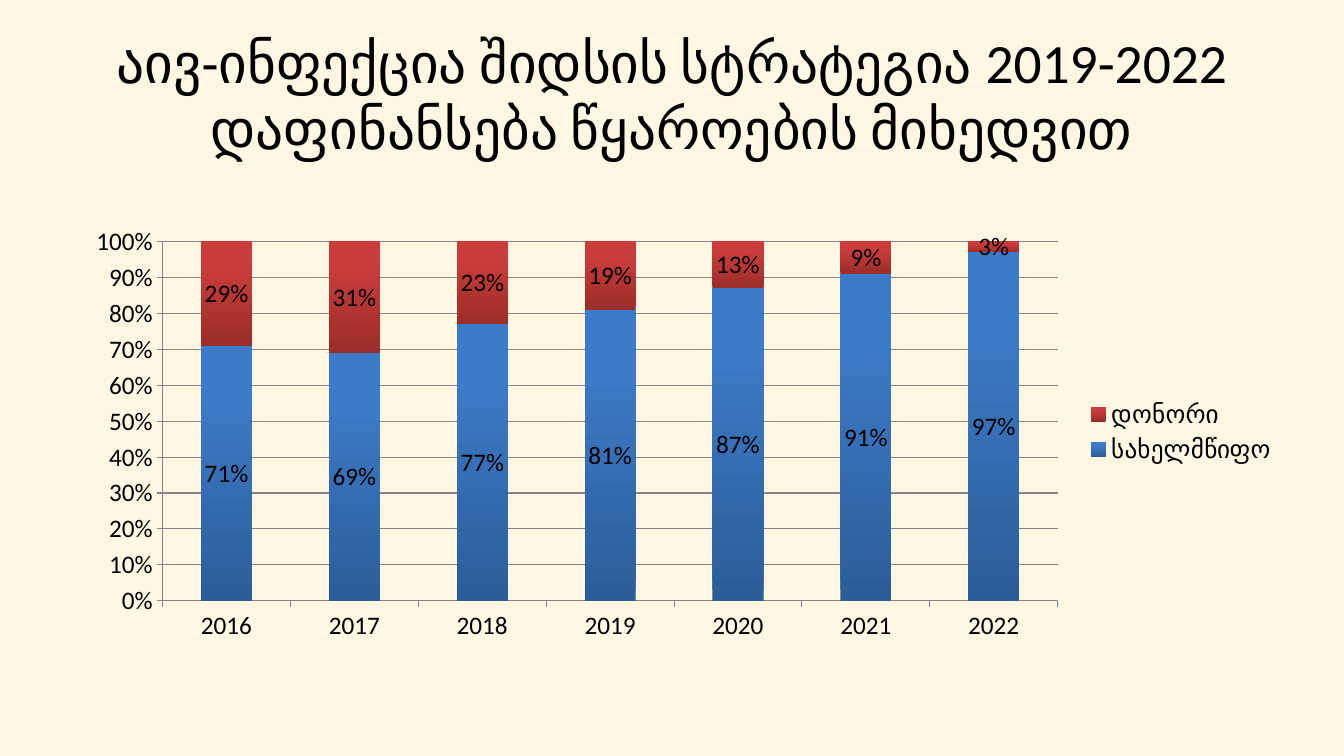
import pptx
import pptx.chart.data
import pptx.dml.color
import pptx.enum.chart
import pptx.enum.text
import pptx.oxml
import pptx.oxml.ns
import pptx.util


def colour(code):
    return pptx.dml.color.RGBColor.from_string(code)


class FundingSlide:
    font = "Calibri"
    ink = "000000"
    rule = "868686"

    def __init__(self, deck, background):
        self.width, self.height = deck.slide_width, deck.slide_height
        self.slide = deck.slides.add_slide(deck.slide_layouts[6])
        fill = self.slide.background.fill
        fill.solid()
        fill.fore_color.rgb = colour(background)

    def box(self, left, top, width, height):
        return (int(left * self.width), int(top * self.height),
                int(width * self.width), int(height * self.height))

    def style(self, font, size):
        font.name = self.font
        font.size = pptx.util.Pt(size)
        font.color.rgb = colour(self.ink)

    def title(self, wording, share, size):
        frame = self.slide.shapes.add_textbox(*self.box(*share)).text_frame
        frame.word_wrap = True
        frame.vertical_anchor = pptx.enum.text.MSO_ANCHOR.MIDDLE
        frame.text = wording
        paragraph = frame.paragraphs[0]
        paragraph.alignment = pptx.enum.text.PP_ALIGN.CENTER
        for run in paragraph.runs:
            self.style(run.font, size)

    def line(self, target):
        target.line.color.rgb = colour(self.rule)
        target.line.width = pptx.util.Pt(0.75)

    def stacked_chart(self, years, sources, share, size, plot_share):
        data = pptx.chart.data.CategoryChartData(number_format="0%")
        data.categories = years
        for name, values, _ in sources:
            data.add_series(name, values)
        chart = self.slide.shapes.add_chart(
            pptx.enum.chart.XL_CHART_TYPE.COLUMN_STACKED_100,
            *self.box(*share), data).chart
        self.style(chart.font, size)
        chart.has_title = False
        chart.has_legend = True
        chart.legend.position = pptx.enum.chart.XL_LEGEND_POSITION.RIGHT
        chart.legend.include_in_layout = False

        for axis in (chart.category_axis, chart.value_axis):
            axis.major_tick_mark = pptx.enum.chart.XL_TICK_MARK.OUTSIDE
            axis.minor_tick_mark = pptx.enum.chart.XL_TICK_MARK.NONE
            self.line(axis.format)
        chart.value_axis.has_major_gridlines = True
        self.line(chart.value_axis.major_gridlines.format)
        chart.value_axis.maximum_scale = 1
        chart.value_axis.major_unit = 0.1
        chart.value_axis.tick_labels.number_format = "0%"
        chart.value_axis.tick_labels.number_format_is_linked = False

        plot = chart.plots[0]
        plot.gap_width, plot.overlap, plot.vary_by_categories = 150, 100, False
        for series, (_, _, shades) in zip(plot.series, sources):
            self.shade(series.format.fill, shades)
            labels = series.data_labels
            labels.show_value = True
            labels.number_format = "0%"
            labels.number_format_is_linked = False
            self.style(labels.font, size)
        self.place_plot(chart, plot_share)

    def shade(self, fill, shades):
        fill.gradient()
        fill.gradient_angle = 90
        for stop, shade, position in zip(fill.gradient_stops, shades, (0, 0.8)):
            stop.color.rgb = colour(shade)
            stop.position = position

    def place_plot(self, chart, plot_share):
        area = chart.element.find(".//" + pptx.oxml.ns.qn("c:plotArea"))
        for layout in area.findall(pptx.oxml.ns.qn("c:layout")):
            area.remove(layout)
        sizes = "".join(f'<c:{key} val="{value}"/>'
                        for key, value in zip("xywh", plot_share))
        area.insert(0, pptx.oxml.parse_xml(
            f'<c:layout {pptx.oxml.ns.nsdecls("c")}><c:manualLayout>'
            '<c:layoutTarget val="inner"/><c:xMode val="edge"/>'
            f'<c:yMode val="edge"/>{sizes}</c:manualLayout></c:layout>'))


def main():
    deck = pptx.Presentation()
    deck.slide_width = pptx.util.Inches(13.33)
    deck.slide_height = pptx.util.Inches(7.5)
    funding = FundingSlide(deck, "FFF6E3")
    funding.title("აივ-ინფექცია შიდსის სტრატეგია 2019-2022\v"
                  "დაფინანსება წყაროების მიხედვით",
                  (0.05, 0.04, 0.9, 0.17), 39.6)

    years = [str(year) for year in range(2016, 2023)]
    state = (0.71, 0.69, 0.77, 0.81, 0.87, 0.91, 0.97)
    donor = [round(1 - part, 2) for part in state]
    funding.stacked_chart(
        years,
        [("სახელმწიფო", state, ("2C5D98", "3C7BC7")),
         ("დონორი", donor, ("9B2D2A", "CB3D3A"))],
        (0.058, 0.285, 0.9, 0.573), 18, (0.07, 0.06, 0.74, 0.83))
    deck.save("out.pptx")


if __name__ == "__main__":
    main()
